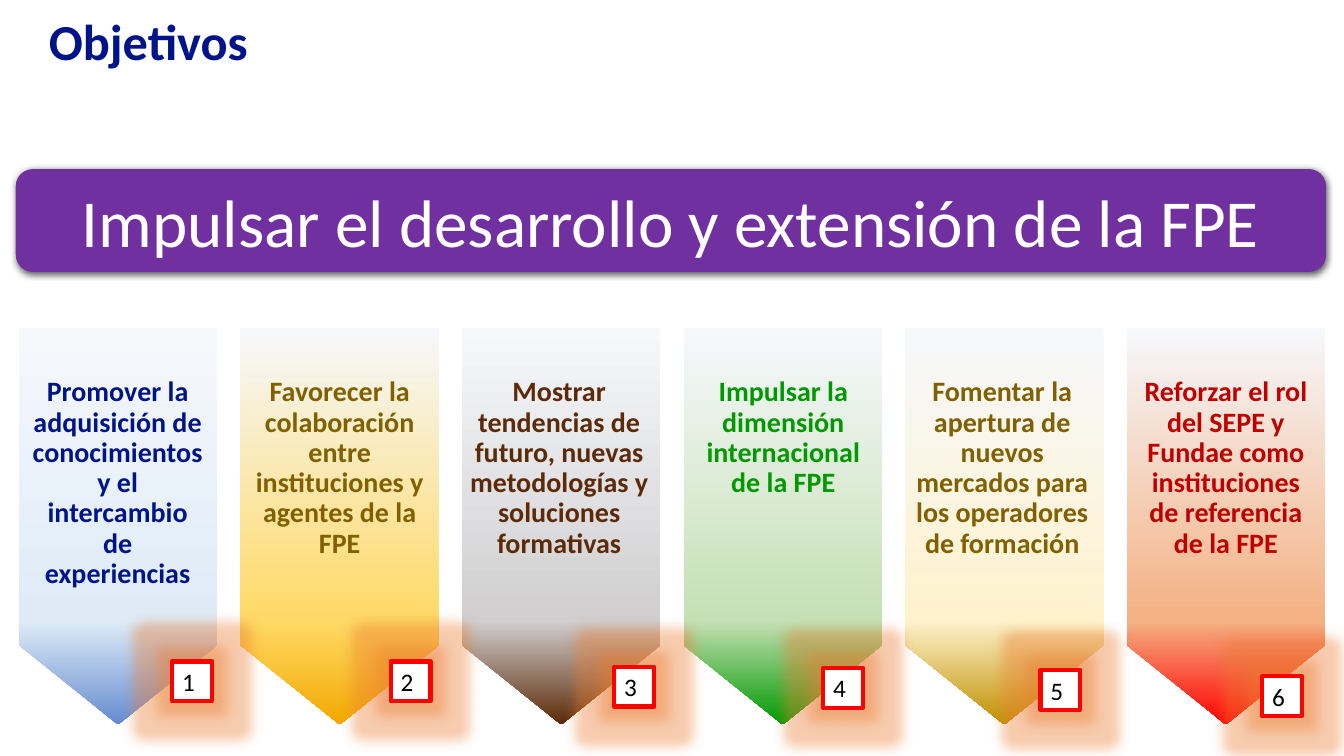
"""Build the "Objetivos" slide: a banner above six numbered goal columns."""
import copy

import lxml.etree
import pptx
import pptx.dml.color
import pptx.enum.shapes
import pptx.enum.text
import pptx.oxml
import pptx.oxml.ns
import pptx.util

PX = 9525
COLORS = {
    "navy": "001489", "purple": "7030A0", "white": "FFFFFF", "black": "000000",
    "pale": "F6F8FC", "light blue": "DEEBF7", "blue": "668CD0",
    "light gold": "FFD966", "gold": "F2A900", "olive": "806000",
    "grey": "D0CECE", "brown": "5C2A08", "light green": "C5E0B4",
    "green": "009900", "cream": "FFF2CC", "mustard": "BF9000",
    "peach": "F4B183", "red": "FF0000", "dark red": "C00000", "orange": "ED7D31",
}
RGB = {name: pptx.dml.color.RGBColor.from_string(value) for name, value in COLORS.items()}
SHAPES = pptx.enum.shapes.MSO_SHAPE
ALIGN = pptx.enum.text.PP_ALIGN
ANCHOR = pptx.enum.text.MSO_ANCHOR


def write(shape, text, size, color, bold=False, align=ALIGN.LEFT, anchor=ANCHOR.TOP, spacing=1.0):
    frame = shape.text_frame
    frame.word_wrap = True
    frame.vertical_anchor = anchor
    paragraph = frame.paragraphs[0]
    paragraph.alignment = align
    paragraph.line_spacing = spacing
    run = paragraph.add_run()
    run.text = text
    run.font.name = "Calibri"
    run.font.size = pptx.util.Pt(size)
    run.font.bold = bold
    run.font.color.rgb = RGB[color]


def add_effect(shape, tag, attributes, color, alpha):
    shape.shadow.inherit = False
    effects = shape._element.spPr.find(pptx.oxml.ns.qn("a:effectLst"))
    effect = lxml.etree.SubElement(effects, pptx.oxml.ns.qn(tag), attributes)
    tint = lxml.etree.SubElement(effect, pptx.oxml.ns.qn("a:srgbClr"), val=COLORS[color])
    lxml.etree.SubElement(tint, pptx.oxml.ns.qn("a:alpha"), val=str(alpha * 1000))


presentation = pptx.Presentation()
presentation.slide_width = 1280 * PX
presentation.slide_height = 720 * PX
slide = presentation.slides.add_slide(presentation.slide_layouts[6])

title = slide.shapes.add_textbox(37 * PX, 11 * PX, 779 * PX, 37 * PX)
write(title, "Objetivos", 36, "navy", bold=True, spacing=0.9)

banner = slide.shapes.add_shape(SHAPES.ROUNDED_RECTANGLE, 15 * PX, 161 * PX, 1248 * PX, 98 * PX)
banner.fill.solid()
banner.fill.fore_color.rgb = RGB["purple"]
banner.line.fill.background()
shadow = {"blurRad": "57150", "dist": "19050", "dir": "5400000", "algn": "ctr", "rotWithShape": "0"}
add_effect(banner, "a:outerShdw", shadow, "black", 63)
write(banner, "Impulsar el desarrollo y extensión de la FPE", 48, "white",
      align=ALIGN.CENTER, anchor=ANCHOR.MIDDLE)

goals = [
    ("Promover la adquisición de conocimientos y el intercambio de experiencias",
     "navy", "light blue", "blue", 19, 186, 164, 630),
    ("Favorecer la colaboración entre instituciones y agentes de la FPE",
     "olive", "light gold", "gold", 224, 199, 372, 630),
    ("Mostrar tendencias de futuro, nuevas metodologías y soluciones formativas",
     "brown", "grey", "brown", 438, 189, 585, 635),
    ("Impulsar la dimensión internacional de la FPE",
     "green", "light green", "green", 651, 190, 784, 636),
    ("Fomentar la apertura de nuevos mercados para los operadores de formación",
     "olive", "cream", "mustard", 860, 189, 991, 638),
    ("Reforzar el rol del SEPE y Fundae como instituciones de referencia de la FPE",
     "dark red", "peach", "red", 1073, 189, 1202, 644),
]

for index, (_, _, middle, tip, *_) in enumerate(goals):
    column = slide.shapes.add_shape(SHAPES.FLOWCHART_OFFPAGE_CONNECTOR,
                                    (18 + 211 * index) * PX, 312 * PX, 189 * PX, 378 * PX)
    column.shadow.inherit = False
    column.line.fill.background()
    column.fill.gradient()
    column.fill.gradient_angle = 270
    stop_list = column._element.spPr.find(".//" + pptx.oxml.ns.qn("a:gsLst"))
    stop_list.append(copy.deepcopy(stop_list[0]))
    for stop, position, color in zip(column.fill.gradient_stops, (0, 0.74, 1), ("pale", middle, tip)):
        stop.position = position
        stop.color.rgb = RGB[color]

for text, color, _, _, left, width, _, _ in goals:
    label = slide.shapes.add_textbox(left * PX, 355 * PX, width * PX, 184 * PX)
    write(label, text, 20, color, bold=True, align=ALIGN.CENTER, spacing=0.9)

for number, (*_, left, top) in enumerate(goals, start=1):
    badge = slide.shapes.add_shape(SHAPES.RECTANGLE, left * PX, top * PX, 38 * PX, 38 * PX)
    badge.fill.solid()
    badge.fill.fore_color.rgb = RGB["white"]
    badge.line.color.rgb = RGB["red"]
    badge.line.width = pptx.util.Pt(3)
    add_effect(badge, "a:glow", {"rad": "228600"}, "orange", 40)
    write(badge, str(number), 18, "black")

presentation.save("out.pptx")
